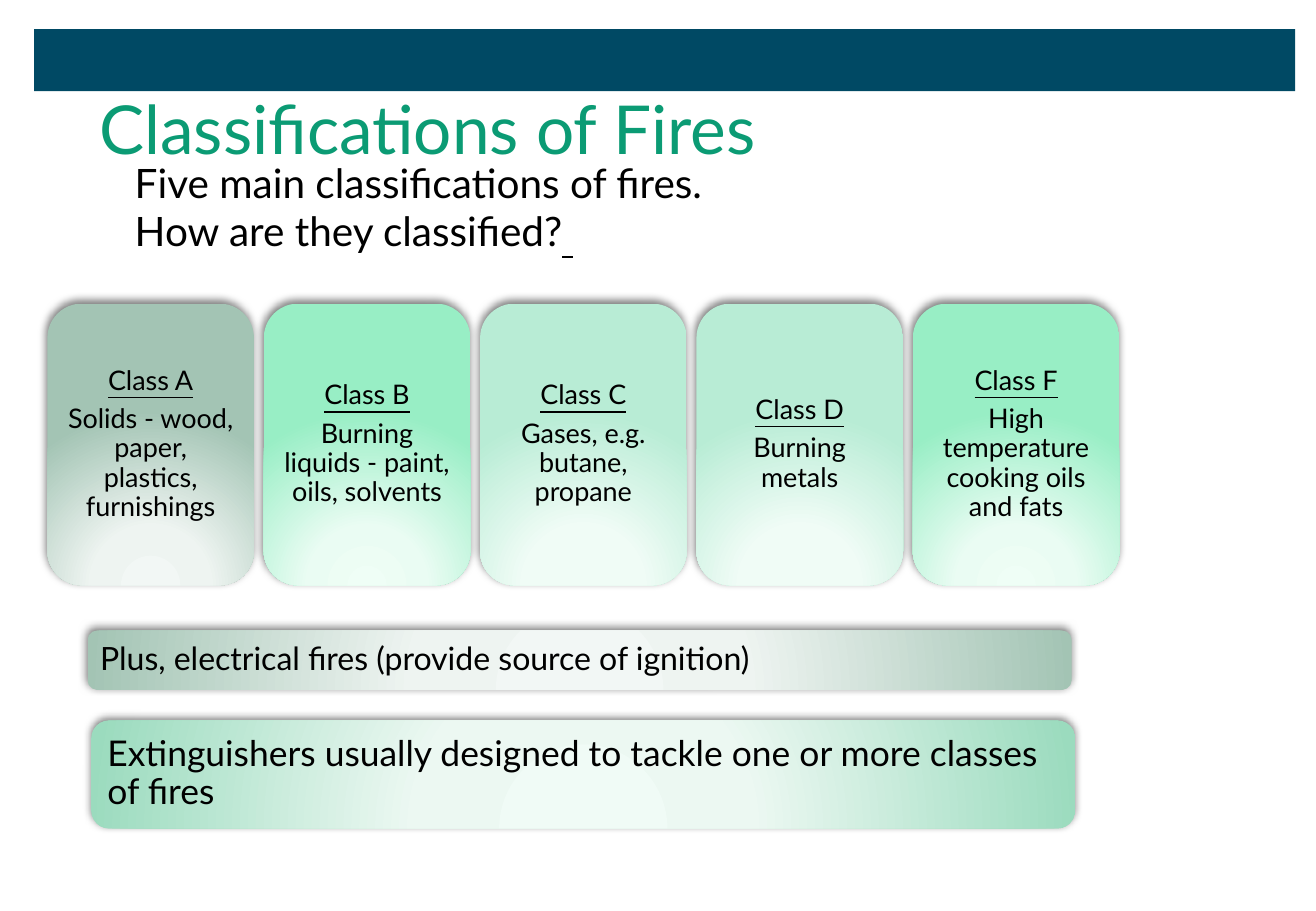
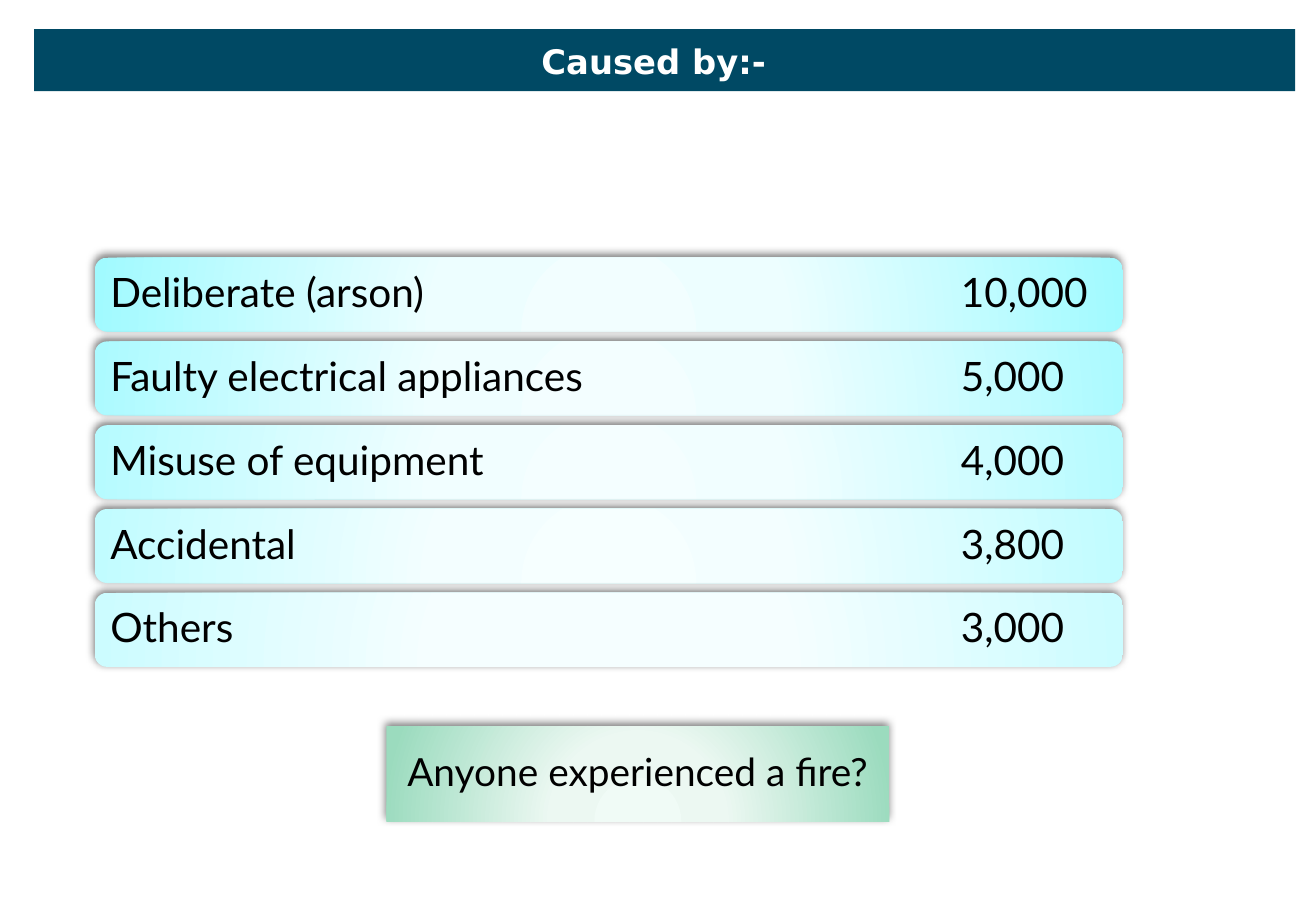
from lxml import etree
from pptx import Presentation
from pptx.dml.color import RGBColor
from pptx.enum.shapes import MSO_SHAPE
from pptx.enum.text import MSO_ANCHOR, PP_ALIGN
from pptx.oxml import parse_xml
from pptx.oxml.ns import nsdecls, qn
from pptx.util import Inches, Pt

RECT, ROUND = MSO_SHAPE.RECTANGLE, MSO_SHAPE.ROUNDED_RECTANGLE
LEFT, CENTER = PP_ALIGN.LEFT, PP_ALIGN.CENTER
TOP, MIDDLE = MSO_ANCHOR.TOP, MSO_ANCHOR.MIDDLE

WIDTH, HEIGHT = Inches(10.83), Inches(7.5)
BODY_FONT, CAPTION_FONT = "Lato", "DejaVu Sans"
COLORS = {"band": "004964", "title": "0B9B74", "text": "000000", "white": "FFFFFF"}

# Gradient stops from the glow at the bottom centre to the edge
GLOWS = {
    "sage": ("F2F7F5", "EEF4F1", "A3C4B4"),
    "mint": ("EFFEF6", "EAFCF3", "98EEC5"),
    "pale": ("F3FDF9", "F0FCF6", "B8ECD5"),
    "green": ("F0FBF6", "ECF8F2", "9BDBBE"),
    "cyan": ("F2FEFF", "EDFEFF", "A1FAFF"),
    "ice": ("F7FFFF", "F5FEFF", "CCFCFF"),
}
STOPS = (0, 34, 100)

CLASSES = [
    ("Class A", "Solids - wood, paper, plastics, furnishings", "sage"),
    ("Class B", "Burning liquids - paint, oils, solvents", "mint"),
    ("Class C", "Gases, e.g. butane, propane", "pale"),
    ("Class D", "Burning metals", "pale"),
    ("Class F", "High temperature cooking oils and fats", "mint"),
]
CAUSES = [
    ("Deliberate (arson)", "10,000"),
    ("Faulty electrical appliances", "5,000"),
    ("Misuse of equipment", "4,000"),
    ("Accidental", "3,800"),
    ("Others", "3,000"),
]


def box(x, y, w, h):
    """Turn percentages of the slide into a position and size."""
    return [round(share * side / 100)
            for share, side in zip((x, y, w, h), (WIDTH, HEIGHT) * 2)]


def blend(start, end, t):
    """Mix two hex colours."""
    pairs = zip(bytes.fromhex(start), bytes.fromhex(end))
    return "".join(f"{round(a + (b - a) * t):02X}" for a, b in pairs)


def write(tf, paragraphs, size, color="text", font=BODY_FONT, bold=False,
          align=LEFT, anchor=TOP, spacing=None, inset=None, wrap=True):
    """Fill a frame; each paragraph is a list of (text, underlined) runs."""
    tf.word_wrap, tf.vertical_anchor = wrap, anchor
    if inset is not None:
        tf.margin_left = tf.margin_right = Inches(inset)
        tf.margin_top = tf.margin_bottom = Inches(inset)
    for i, runs in enumerate(paragraphs):
        p = tf.paragraphs[0] if i == 0 else tf.add_paragraph()
        p.alignment, p.line_spacing = align, spacing
        if spacing and i < len(paragraphs) - 1:
            p.space_after = Pt(size * 0.35)
        for text, underlined in runs:
            r = p.add_run()
            r.text = text
            r.font.name, r.font.size, r.font.bold = font, Pt(size), bold
            r.font.underline = underlined
            r.font.color.rgb = RGBColor.from_string(COLORS[color])


def add_text(s, place, paragraphs, size, **style):
    tf = s.shapes.add_textbox(*box(*place)).text_frame
    write(tf, paragraphs, size, **style)


def add_panel(s, place, glow, paragraphs, size, inset, kind=ROUND, align=LEFT):
    """Glowing, shadowed panel with its text centred vertically."""
    sp = s.shapes.add_shape(kind, *box(*place))
    sp.line.fill.background()
    sp.fill.background()
    stops = "".join(f'<a:gs pos="{pos * 1000}"><a:srgbClr val="{c}"/></a:gs>'
                    for pos, c in zip(STOPS, glow))
    props = sp._element.spPr
    props.replace(props.find(qn("a:noFill")), parse_xml(
        f'<a:gradFill {nsdecls("a")} rotWithShape="1"><a:gsLst>{stops}</a:gsLst>'
        '<a:path path="circle"><a:fillToRect l="50000" t="155000" r="50000" '
        'b="-55000"/></a:path></a:gradFill>'))
    # Soft shadow above the panel
    sp.shadow.inherit = False
    shadow = etree.SubElement(
        props.find(qn("a:effectLst")), qn("a:outerShdw"), rotWithShape="0",
        blurRad=str(Pt(5)), dist=str(Pt(2)), dir=str(245 * 60000))
    color = etree.SubElement(shadow, qn("a:srgbClr"), val=COLORS["text"])
    etree.SubElement(color, qn("a:alpha"), val="50000")
    write(sp.text_frame, paragraphs, size, align=align, anchor=MIDDLE,
          spacing=0.9, inset=inset)
    return sp


def add_tab(p, position):
    tabs = etree.SubElement(p._p.get_or_add_pPr(), qn("a:tabLst"))
    etree.SubElement(tabs, qn("a:tab"), pos=str(Inches(position)), algn="l")


def new_slide(prs):
    """Blank slide with the shared top band."""
    s = prs.slides.add_slide(prs.slide_layouts[6])
    band = s.shapes.add_shape(RECT, *box(2.59, 3.2, 95.84, 6.8))
    band.fill.solid()
    band.fill.fore_color.rgb = RGBColor.from_string(COLORS["band"])
    band.line.fill.background()
    band.shadow.inherit = False
    return s


def build_classes(prs):
    s = new_slide(prs)
    add_text(s, (6.65, 8.93, 70.08, 19.2), [[("Classifications of Fires", False)]],
             40, color="title")
    add_text(s, (9.33, 16.67, 70.08, 12.13),
             [[("Five main classifications of fires.", False)],
              [("How are they classified?", False), (" ", True)]], 24)
    # One card per class
    for col, (name, examples, glow) in enumerate(CLASSES):
        add_panel(s, (3.6 + col * 16.44, 33.33, 15.7, 30.93), GLOWS[glow],
                  [[(name, True)], [(examples, False)]], 16, 0.07, align=CENTER)
    # Remarks below the cards
    add_panel(s, (6.65, 69.2, 74.79, 6.53), GLOWS["sage"],
              [[("Plus, electrical fires (provide source of ignition)", False)]],
              19, 0.08)
    add_panel(s, (6.93, 79.07, 74.79, 11.87), GLOWS["green"],
              [[("Extinguishers usually designed to tackle one or more classes "
                 "of fires", False)]], 21, 0.09)


def build_causes(prs):
    s = new_slide(prs)
    add_text(s, (40.17, 3.87, 19.02, 5.87), [[("Caused by:-", False)]], 20,
             color="white", font=CAPTION_FONT, bold=True, align=CENTER, wrap=False)
    # One bar per cause, fading downwards
    for row, (cause, count) in enumerate(CAUSES):
        t = row / (len(CAUSES) - 1)
        glow = [blend(a, b, t) for a, b in zip(GLOWS["cyan"], GLOWS["ice"])]
        sp = add_panel(s, (7.2, 28.27 + row * 9.2, 78.12, 8.13), glow,
                       [[(f"{cause}\t{count}", False)]], 24, 0.1)
        add_tab(sp.text_frame.paragraphs[0], 7)
    # Closing question
    add_panel(s, (29.36, 79.73, 38.23, 10.4), GLOWS["green"],
              [[("Anyone experienced a fire?", False)]], 23, 0.1,
              kind=RECT, align=CENTER)


def main():
    prs = Presentation()
    prs.slide_width, prs.slide_height = WIDTH, HEIGHT
    build_classes(prs)
    build_causes(prs)
    prs.save("out.pptx")


if __name__ == "__main__":
    main()
